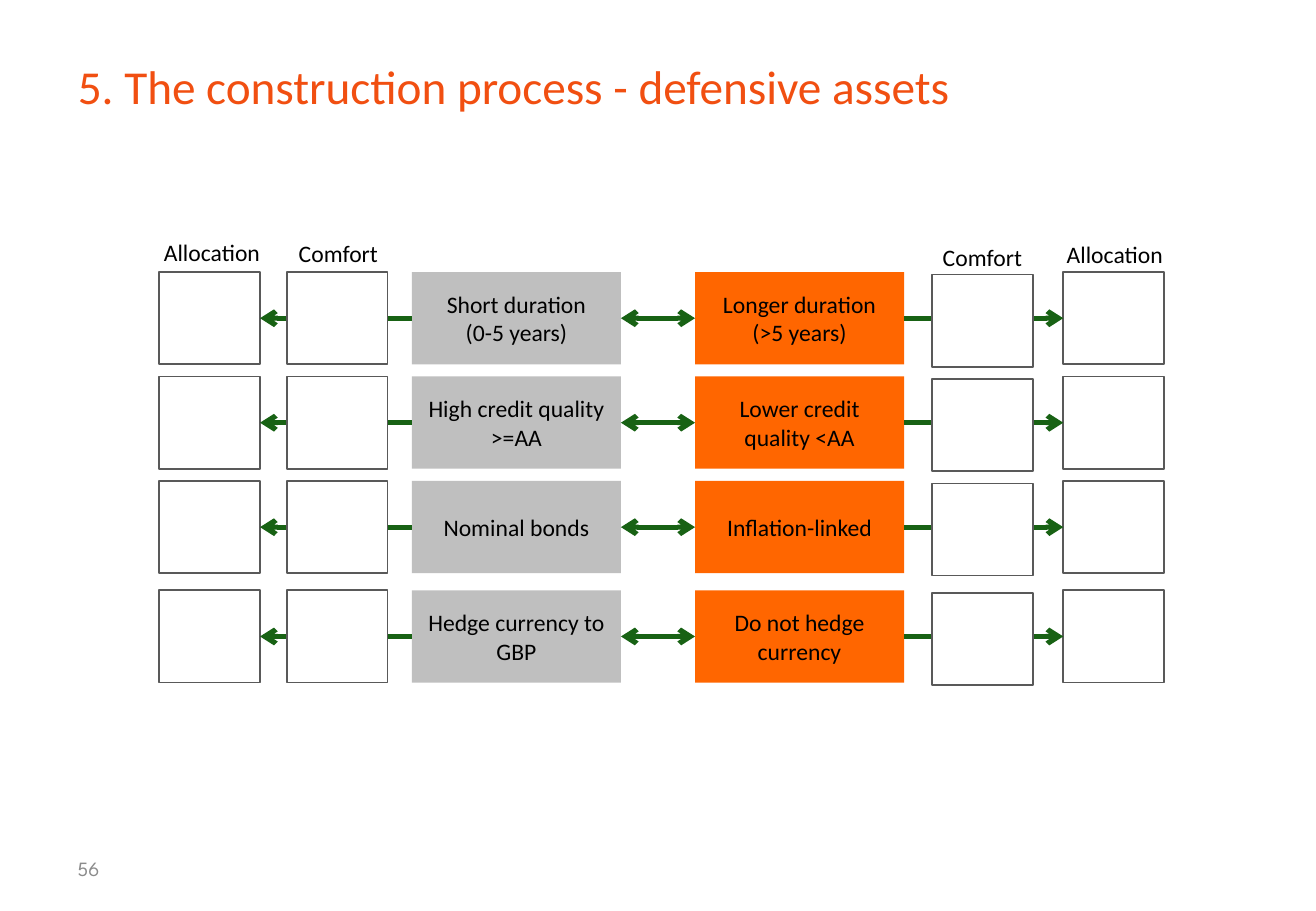
from lxml.etree import SubElement
from pptx import Presentation
from pptx.dml.color import RGBColor
from pptx.enum.shapes import MSO_CONNECTOR as Connector, MSO_SHAPE as Shape
from pptx.enum.text import MSO_ANCHOR as Anchor, PP_ALIGN as Align
from pptx.oxml.ns import qn
from pptx.util import Inches, Pt

COLORS = {
    "title": "F14F11", "text": "000000", "number": "8C8C8C",
    "short": "BFBFBF", "long": "FF6600", "arrow": "186214",
    "box": "FFFFFF", "outline": "595959",
}

ROW_TOPS = (2.24, 3.1, 3.96, 4.86)
CHOICES = (
    ("Short duration\n(0-5 years)", "Longer duration\n(>5 years)"),
    ("High credit quality\n>=AA", "Lower credit quality <AA"),
    ("Nominal bonds", "Inflation-linked"),
    ("Hedge currency to GBP", "Do not hedge currency"),
)
ROW_HEIGHT = 0.76
CHOICE_WIDTH, ENTRY_WIDTH = 1.72, 0.83
DEFENSIVE_LEFT, RISKIER_LEFT = 3.39, 5.72
LEFT_ALLOCATION, LEFT_COMFORT = 1.31, 2.36
RIGHT_COMFORT, RIGHT_ALLOCATION = 7.67, 8.75
COMFORT_DROP = 0.02
TOP, LEFT, BOTTOM, RIGHT = range(4)


def color(name):
    return RGBColor.from_string(COLORS[name])


def format_run(run, size, color_name, font="Calibri"):
    run.font.size = Pt(size)
    run.font.name = font
    run.font.color.rgb = color(color_name)


def add_rectangle(slide, left, top, width, fill, outline=None):
    shape = slide.shapes.add_shape(Shape.RECTANGLE, Inches(left), Inches(top),
                                   Inches(width), Inches(ROW_HEIGHT))
    shape.shadow.inherit = False
    shape.fill.solid()
    shape.fill.fore_color.rgb = color(fill)
    if outline:
        shape.line.color.rgb = color(outline)
        shape.line.width = Pt(1)
    else:
        shape.line.fill.background()
    return shape


def add_choice(slide, left, top, text, fill):
    shape = add_rectangle(slide, left, top, CHOICE_WIDTH, fill)
    frame = shape.text_frame
    frame.text = text
    frame.word_wrap = True
    frame.vertical_anchor = Anchor.MIDDLE
    for paragraph in frame.paragraphs:
        paragraph.alignment = Align.CENTER
        format_run(paragraph.runs[0], 14, "text")
    return shape


def add_entry_box(slide, left, top):
    return add_rectangle(slide, left, top, ENTRY_WIDTH, "box", "outline")


def add_arrow(slide, start, start_side, end, end_side, both_ends=False):
    arrow = slide.shapes.add_connector(Connector.STRAIGHT, 0, 0, 0, 0)
    arrow.begin_connect(start, start_side)
    arrow.end_connect(end, end_side)
    arrow.line.color.rgb = color("arrow")
    arrow.line.width = Pt(3)
    line = arrow.line._get_or_add_ln()
    for tag in ("a:headEnd", "a:tailEnd") if both_ends else ("a:tailEnd",):
        SubElement(line, qn(tag)).set("type", "arrow")
    SubElement(arrow._element.spPr, qn("a:effectLst"))


def add_label(slide, text, left, top, width):
    box = slide.shapes.add_textbox(Inches(left), Inches(top), Inches(width), Inches(0.34))
    frame = box.text_frame
    frame.text = text
    frame.word_wrap = False
    format_run(frame.paragraphs[0].runs[0], 14, "text")


def add_slide_number(slide, number):
    box = slide.shapes.add_textbox(Inches(0.54), Inches(6.95), Inches(1.89), Inches(0.4))
    frame = box.text_frame
    frame.text = number
    frame.word_wrap = True
    frame.vertical_anchor = Anchor.MIDDLE
    format_run(frame.paragraphs[0].runs[0], 12, "number", "League Spartan")


def add_title(slide, text):
    title = slide.shapes.title
    title.left, title.top = Inches(0.54), Inches(0.3)
    title.width, title.height = Inches(9.75), Inches(0.81)
    frame = title.text_frame
    frame.text = text
    frame.vertical_anchor = Anchor.MIDDLE
    frame.paragraphs[0].alignment = Align.LEFT
    format_run(frame.paragraphs[0].runs[0], 28, "title")


def add_row(slide, top, defensive_text, riskier_text):
    defensive = add_choice(slide, DEFENSIVE_LEFT, top, defensive_text, "short")
    riskier = add_choice(slide, RISKIER_LEFT, top, riskier_text, "long")
    left_allocation = add_entry_box(slide, LEFT_ALLOCATION, top)
    right_allocation = add_entry_box(slide, RIGHT_ALLOCATION, top)
    add_arrow(slide, defensive, RIGHT, riskier, LEFT, both_ends=True)
    add_arrow(slide, defensive, LEFT, left_allocation, RIGHT)
    add_arrow(slide, riskier, RIGHT, right_allocation, LEFT)
    # The comfort boxes lie over the arrows to the allocation boxes.
    add_entry_box(slide, LEFT_COMFORT, top)
    add_entry_box(slide, RIGHT_COMFORT, top + COMFORT_DROP)


def main():
    presentation = Presentation()
    presentation.slide_width, presentation.slide_height = Inches(10.83), Inches(7.5)
    slide = presentation.slides.add_slide(presentation.slide_layouts[5])
    add_title(slide, "5. The construction process - defensive assets")
    for top, (defensive_text, riskier_text) in zip(ROW_TOPS, CHOICES):
        add_row(slide, top, defensive_text, riskier_text)
    for text, left, top, width in (
        ("Allocation", 1.25, 1.91, 1.01),
        ("Comfort", 2.36, 1.92, 0.85),
        ("Comfort", 7.66, 1.95, 0.85),
        ("Allocation", 8.68, 1.93, 1.01),
    ):
        add_label(slide, text, left, top, width)
    add_slide_number(slide, "56")
    presentation.save("out.pptx")


if __name__ == "__main__":
    main()
